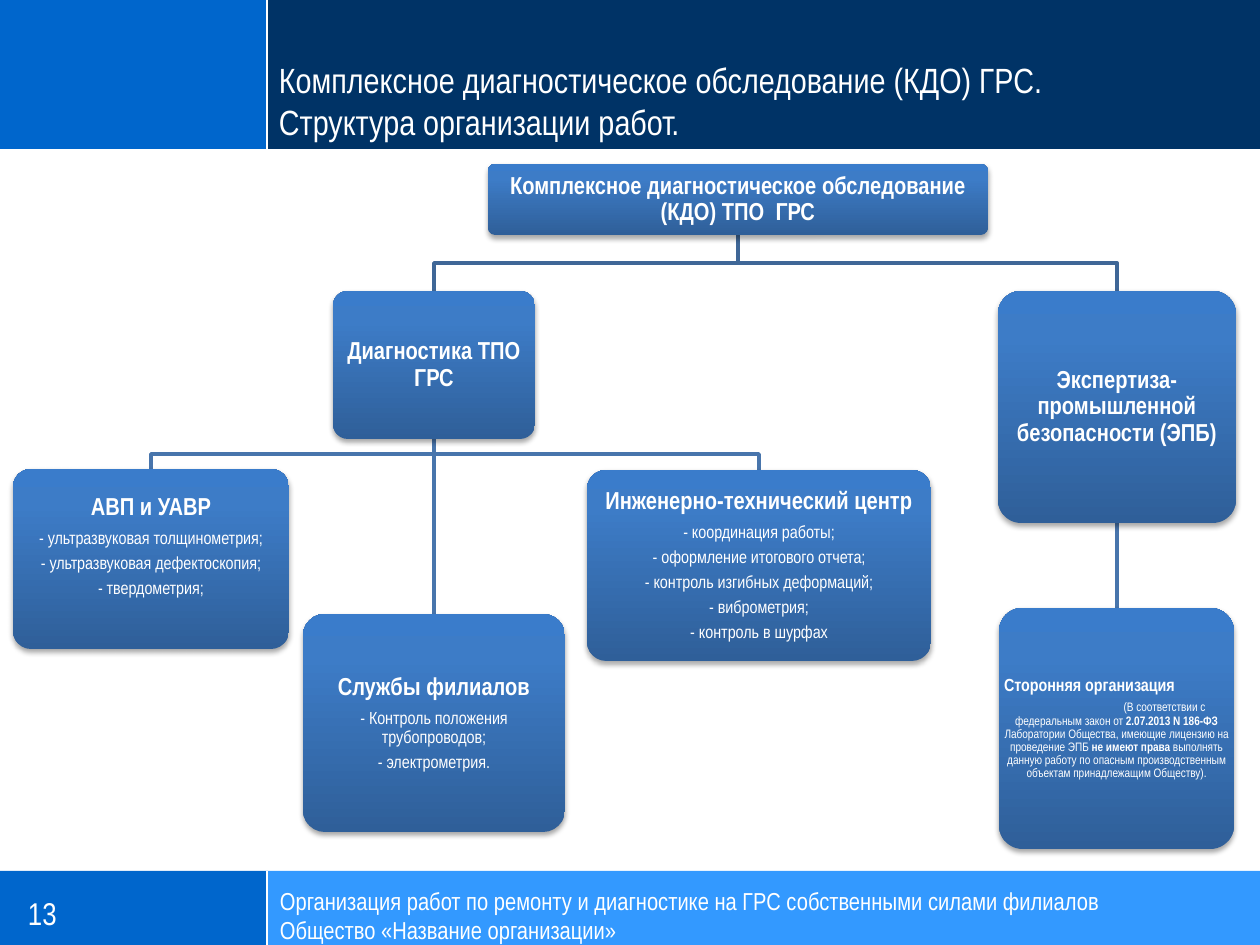
from lxml.etree import SubElement as Sub
from pptx import Presentation
from pptx.dml.color import RGBColor
from pptx.enum.shapes import MSO_CONNECTOR as Link, MSO_SHAPE as Form
from pptx.enum.text import MSO_ANCHOR as Anchor, PP_ALIGN as Align
from pptx.oxml import parse_xml
from pptx.oxml.ns import nsdecls, qn
from pptx.util import Pt

UNIT = 914400 / 126
FONT = "Arial Narrow"
TITLE = "Комплексное диагностическое обследование (КДО) ГРС.\vСтруктура организации работ."
FOOT = ["Организация работ по ремонту и диагностике на ГРС собственными силами филиалов",
        "Общество «Название организации»"]
BARS = [((0, 871, 268, 74), "0066CC"), ((268, 871, 992, 74), "3399FF"),
        ((0, 0, 268, 149), "0066CC"), ((268, 0, 992, 149), "003366")]
RULES = [(871, 945), (0, 149)]
STOPS = [(0, "2F5F99"), (80, "3D7CC7"), (100, "3A7CCB")]

BOXES = {
    "root": ((488, 164, 500, 71), "Комплексное диагностическое обследование (КДО) ТПО  ГРС", []),
    "diag": ((333, 291, 202, 148), "Диагностика ТПО ГРС", []),
    "team": ((13, 469, 276, 180), "АВП и УАВР",
             ["- ультразвуковая толщинометрия;", "- ультразвуковая дефектоскопия;", "- твердометрия;"]),
    "tech": ((587, 470, 344, 191), "Инженерно-технический центр",
             ["- координация работы;", "- оформление итогового отчета;",
              "- контроль изгибных деформаций;", "- виброметрия;", "- контроль в шурфах"]),
    "crew": ((303, 614, 262, 218), "Службы филиалов",
             ["- Контроль положения трубопроводов;", "- электрометрия."]),
    "safe": ((998, 291, 238, 232), "Экспертиза-промышленной безопасности (ЭПБ)", []),
    "firm": ((999, 608, 235, 241), None, []),
}
LINKS = [("root", "diag", "3F6797"), ("root", "safe", "3F6797"), ("diag", "team", "4875AC"),
         ("diag", "tech", "4875AC"), ("diag", "crew", "4875AC"), ("safe", "firm", "4875AC")]
LAW_HEAD = "Сторонняя организация"
LAW = [("(В соответствии с федеральным закон от ", False), ("2.07.2013 N 186-ФЗ", True),
       (" Лаборатории Общества, имеющие лицензию на проведение ЭПБ ", False), ("не имеют права", True),
       (" выполнять данную работу по опасным производственным объектам принадлежащим Обществу).", False)]


def px(n):
    return round(n * UNIT)


def place(at):
    return [px(n) for n in at]


def hue(code):
    return RGBColor.from_string(code)


def style(item, form):
    for key, val in form.items():
        setattr(item, key, val)


def ink(font, size, bold=False):
    style(font, {"name": FONT, "size": Pt(size), "bold": bold})
    font.color.rgb = hue("FFFFFF")


def setup(frame, pad, anchor=Anchor.TOP):
    style(frame, {"word_wrap": True, "vertical_anchor": anchor})
    style(frame, dict(zip(("margin_left", "margin_top", "margin_right", "margin_bottom"), place(pad))))


def write(frame, paras):
    for i, (runs, size, form) in enumerate(paras):
        para = frame.add_paragraph() if i else frame.paragraphs[0]
        style(para, form)
        for text, bold in runs:
            run = para.add_run()
            run.text = text
            ink(run.font, size, bold)
    return frame


def label(at, paras, pad, anchor=Anchor.TOP):
    frame = shapes.add_textbox(*place(at)).text_frame
    setup(frame, pad, anchor)
    return write(frame, paras)


def line(x1, y1, x2, y2, color, width):
    link = shapes.add_connector(Link.STRAIGHT, *place((x1, y1, x2, y2)))
    link.line.color.rgb = hue(color)
    link.line.width = Pt(width)
    Sub(link.element.spPr, qn("a:effectLst"))


def join(top, low, color):
    x, y, w, h = BOXES[top][0]
    x1, y1 = x + w // 2, y + h
    x, y2, w, h = BOXES[low][0]
    x2, mid = x + w // 2, (y1 + y2) // 2
    if abs(x1 - x2) < 2:
        line(x1, y1, x1, y2, color, 2)
        return
    build = shapes.build_freeform(px(x1), px(y1))
    build.add_line_segments([place(p) for p in ((x1, mid), (x2, mid), (x2, y2))], close=False)
    elbow = build.convert_to_shape()
    elbow.shadow.inherit = False
    elbow.fill.background()
    elbow.line.color.rgb = hue(color)
    elbow.line.width = Pt(2)


def card(at):
    box = shapes.add_shape(Form.ROUNDED_RECTANGLE, *place(at))
    box.adjustments[0] = 0.1
    box.line.fill.background()
    box.shadow.inherit = False
    props = box.element.spPr
    stops = "".join(f'<a:gs pos="{p * 1000}"><a:srgbClr val="{c}"/></a:gs>' for p, c in STOPS)
    props.find(qn("a:prstGeom")).addnext(parse_xml(
        f'<a:gradFill {nsdecls("a")} rotWithShape="1"><a:gsLst>{stops}</a:gsLst>'
        '<a:lin ang="16200000" scaled="0"/></a:gradFill>'))
    props.find(qn("a:effectLst")).append(parse_xml(
        f'<a:outerShdw {nsdecls("a")} blurRad="39370" dist="22860" dir="5400000" rotWithShape="0">'
        '<a:srgbClr val="000000"><a:alpha val="35000"/></a:srgbClr></a:outerShdw>'))


def body(size):
    return {"alignment": Align.CENTER, "line_spacing": 0.9, "space_after": Pt(size * 0.35)}


deck = Presentation()
deck.slide_width, deck.slide_height = px(1260), px(945)
slide = deck.slides.add_slide(deck.slide_layouts[5])
shapes = slide.shapes

for at, color in BARS:
    bar = shapes.add_shape(Form.RECTANGLE, *place(at))
    bar.shadow.inherit = False
    bar.fill.solid()
    bar.fill.fore_color.rgb = hue(color)
    bar.line.fill.background()
for y1, y2 in RULES:
    line(267, y1, 267, y2, "FFFFFF", 1.25)

label((15, 888, 267, 52), [([("13", False)], 18, {})], (13, 6, 13, 6))
label((267, 886, 916, 59), [([(text, False)], 14, {}) for text in FOOT], (13, 0, 13, 0))

title = shapes.title
shapes.element.append(title.element)
style(title, dict(zip(("left", "top", "width", "height"), place((266, 0, 994, 149)))))
title.text_frame.text = TITLE
setup(title.text_frame, (13, 6, 13, 6), Anchor.BOTTOM)
head = title.text_frame.paragraphs[0]
head.alignment = Align.LEFT
for run in head.runs:
    ink(run.font, 20)

for link in LINKS:
    join(*link)
for name, (at, text, items) in BOXES.items():
    card(at)
    if text:
        paras = [([(text, True)], 14, body(14))]
        paras += [([(item, False)], 10, body(10)) for item in items]
        label(at, paras, (8, 8, 8, 33 if name == "team" else 8), Anchor.MIDDLE)
    else:
        paras = [([(LAW_HEAD, True)], 10, {**body(10), "alignment": Align.LEFT}), (LAW, 7, body(7))]
        frame = label(at, paras, (5, 5, 5, 5), Anchor.MIDDLE)
        frame.paragraphs[1]._p.get_or_add_pPr().set("indent", str(px(96)))

deck.save("out.pptx")
